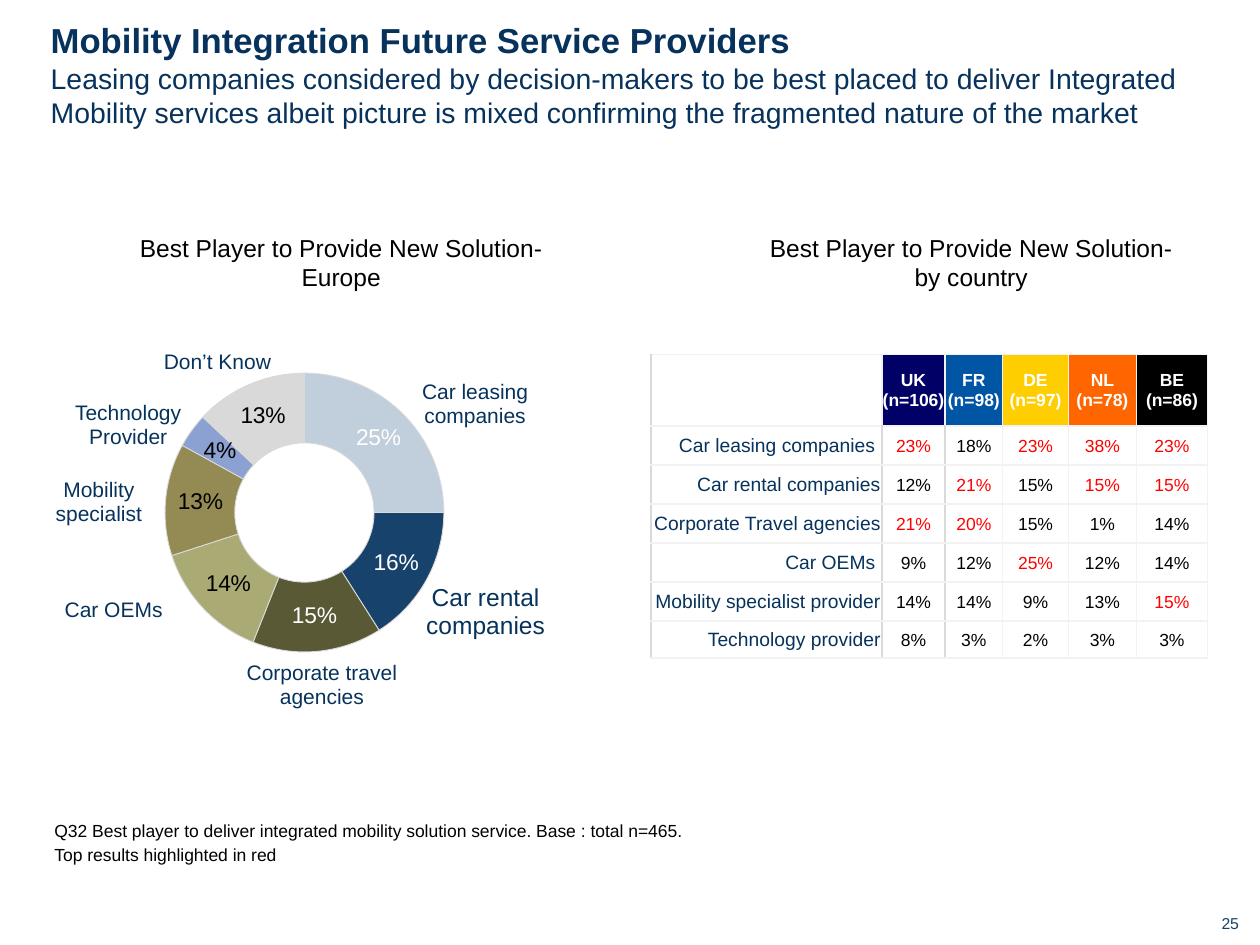
from lxml import etree
from pptx import Presentation
from pptx.chart.data import CategoryChartData
from pptx.dml.color import RGBColor
from pptx.enum.chart import XL_CHART_TYPE
from pptx.enum.text import MSO_ANCHOR, MSO_AUTO_SIZE, PP_ALIGN
from pptx.oxml.ns import qn
from pptx.util import Pt

DOUGHNUT = XL_CHART_TYPE.DOUGHNUT
MIDDLE = MSO_ANCHOR.MIDDLE
NO_FIT = MSO_AUTO_SIZE.NONE
GROW = MSO_AUTO_SIZE.SHAPE_TO_FIT_TEXT
LEFT, CENTER, RIGHT = PP_ALIGN.LEFT, PP_ALIGN.CENTER, PP_ALIGN.RIGHT

NAVY, BLACK, WHITE, RED = "06325C", "000000", "FFFFFF", "FF0000"
PALE, GRAY = "F2F2F2", "D9D9D9"

SHARES = [
    (0.25, "C1CEDC", WHITE),
    (0.16, "17426B", WHITE),
    (0.15, "595936", WHITE),
    (0.14, "AAAA74", BLACK),
    (0.13, "948A54", BLACK),
    (0.04, "8BA1D2", BLACK),
    (0.13, GRAY, BLACK),
]
SLICE_LABELS = [
    ("Car leasing companies", 219, 217.5, 105, 27.5, 12),
    ("Car rental companies", 219, 334, 117, 32, 14),
    ("Mobility specialist", 25, 273.5, 63, 27.5, 12),
    ("Car OEMs", 6.5, 342, 117, 13.5, 12),
    ("Corporate travel agencies", 130, 378, 108, 27.5, 12),
    ("Technology Provider", 24, 229.5, 98.5, 27.5, 12),
    ("Don’t Know", 75, 200, 98.5, 13.5, 12),
]
COUNTRIES = [
    ("UK (n=106)", "000066"),
    ("FR\n(n=98)", "0055A4"),
    ("DE (n=97)", "FFCE00"),
    ("NL\n(n=78)", "FF6600"),
    ("BE (n=86)", BLACK),
]
PLAYERS = [
    ("Car leasing companies ", [23, 18, 23, 38, 23]),
    ("Car rental companies", [12, 21, 15, 15, 15]),
    ("Corporate Travel agencies", [21, 20, 15, 1, 14]),
    ("Car OEMs ", [9, 12, 25, 12, 14]),
    ("Mobility specialist provider ", [14, 14, 9, 13, 15]),
    ("Technology provider", [8, 3, 2, 3, 3]),
]
COLUMN_WIDTHS = [132, 36, 33, 37.5, 39, 40.5]
ROW_HEIGHTS = [41] + [22.3] * 5 + [21]


def color(value):
    return RGBColor.from_string(value)


class SlideBuilder:
    font_name = "Arial"

    def __init__(self, slide):
        self.slide = slide

    def style_font(self, font, size, fill, bold=False):
        font.name = self.font_name
        font.size = Pt(size)
        font.bold = bold
        font.color.rgb = color(fill)

    def title(self, heading, message, left, top, width, height):
        shape = self.slide.shapes.title
        shape.left, shape.top = Pt(left), Pt(top)
        shape.width, shape.height = Pt(width), Pt(height)
        frame = shape.text_frame
        frame.auto_size = NO_FIT
        frame.word_wrap = True
        frame.vertical_anchor = MIDDLE
        frame.margin_left = frame.margin_right = frame.margin_top = frame.margin_bottom = 0
        paragraph = frame.paragraphs[0]
        paragraph.alignment = LEFT
        self.style_font(paragraph.font, 19.8, NAVY, True)
        heading_run = paragraph.add_run()
        heading_run.text = heading
        self.style_font(heading_run.font, 19.8, NAVY, True)
        paragraph.add_line_break()
        message_run = paragraph.add_run()
        message_run.text = message
        self.style_font(message_run.font, 16.2, NAVY)

    def text(self, text, left, top, width, height, size, fill=NAVY,
             align=CENTER, spacing=None, inset=True):
        shape = self.slide.shapes.add_textbox(Pt(left), Pt(top), Pt(width), Pt(height))
        frame = shape.text_frame
        frame.word_wrap = True
        frame.auto_size = GROW
        if not inset:
            frame.margin_left = frame.margin_right = frame.margin_top = frame.margin_bottom = 0
        frame.text = text
        for paragraph in frame.paragraphs:
            paragraph.alignment = align
            paragraph.line_spacing = spacing
            self.style_font(paragraph.font, size, fill)

    def doughnut(self, shares, left, top, width, height):
        data = CategoryChartData(number_format="0%")
        data.categories = [str(number) for number in range(1, len(shares) + 1)]
        data.add_series("Series 1", [share for share, _, _ in shares])
        chart = self.slide.shapes.add_chart(
            DOUGHNUT, Pt(left), Pt(top), Pt(width), Pt(height), data).chart
        chart.has_legend = False
        chart.has_title = False
        self.style_font(chart.font, 12, BLACK)
        plot = chart.plots[0]
        plot.vary_by_categories = True
        plot.has_data_labels = True
        labels = plot.data_labels
        labels.show_value = True
        labels.show_percentage = False
        labels.number_format = "0%"
        labels.number_format_is_linked = False
        self.style_font(labels.font, 13, BLACK)
        for index, (_, fill, label_fill) in enumerate(shares):
            point = plot.series[0].points[index]
            point.format.fill.solid()
            point.format.fill.fore_color.rgb = color(fill)
            point.format.line.color.rgb = color(GRAY)
            point.format.line.width = Pt(0.5)
            self.style_font(point.data_label.font, 13, label_fill)
        plot_area = chart.element.find(".//" + qn("c:plotArea"))
        plot_area.find(".//" + qn("c:holeSize")).set("val", "54")
        layout = plot_area.find(qn("c:layout"))
        if layout is None:
            layout = etree.Element(qn("c:layout"))
            plot_area.insert(0, layout)
        manual = etree.SubElement(layout, qn("c:manualLayout"))
        for tag, value in [("layoutTarget", "inner"), ("xMode", "edge"), ("yMode", "edge"),
                           ("x", "0"), ("y", "0.09"), ("w", "1"), ("h", "0.83")]:
            etree.SubElement(manual, qn("c:" + tag)).set("val", value)

    def cell(self, cell, text, size, fill, align, background=None, bold=False):
        cell.vertical_anchor = MIDDLE
        side = 0 if background else Pt(0.7)
        cell.margin_left = cell.margin_right = side
        cell.margin_top = Pt(0.7)
        cell.margin_bottom = Pt(0.7) if background else 0
        if background:
            cell.fill.solid()
            cell.fill.fore_color.rgb = color(background)
        else:
            cell.fill.background()
        cell.text = text
        for paragraph in cell.text_frame.paragraphs:
            paragraph.alignment = align
            self.style_font(paragraph.font, size, fill, bold)

    def borders(self, cell, left, right):
        properties = cell._tc.get_or_add_tcPr()
        edges = [("a:lnL", left), ("a:lnR", right), ("a:lnT", PALE), ("a:lnB", PALE)]
        for position, (tag, fill) in enumerate(edges):
            line = etree.Element(qn(tag), w=str(Pt(1)))
            solid = etree.SubElement(line, qn("a:solidFill"))
            etree.SubElement(solid, qn("a:srgbClr"), val=fill)
            properties.insert(position, line)

    def country_table(self, countries, players, left, top):
        table = self.slide.shapes.add_table(
            len(ROW_HEIGHTS), len(COLUMN_WIDTHS), Pt(left), Pt(top),
            Pt(sum(COLUMN_WIDTHS)), Pt(sum(ROW_HEIGHTS))).table
        table.first_row = table.horz_banding = False
        for column, width in zip(table.columns, COLUMN_WIDTHS):
            column.width = Pt(width)
        for row, height in zip(table.rows, ROW_HEIGHTS):
            row.height = Pt(height)
        self.cell(table.cell(0, 0), "", 10, NAVY, CENTER)
        for column, (country, fill) in enumerate(countries, 1):
            self.cell(table.cell(0, column), country, 10, WHITE, CENTER, fill, True)
        second_best = [sorted(scores)[-2] for scores in zip(*(row for _, row in players))]
        for row, (player, scores) in enumerate(players, 1):
            self.cell(table.cell(row, 0), player, 11, NAVY, RIGHT)
            for column, (score, limit) in enumerate(zip(scores, second_best), 1):
                fill = RED if score >= limit else BLACK
                self.cell(table.cell(row, column), f"{score}%", 10, fill, CENTER)
        for row in range(len(ROW_HEIGHTS)):
            for column in range(len(COLUMN_WIDTHS)):
                left_fill = GRAY if column == 0 or (row and column < 3) else PALE
                right_fill = GRAY if row and column < 2 else PALE
                self.borders(table.cell(row, column), left_fill, right_fill)


def main():
    presentation = Presentation()
    presentation.slide_width, presentation.slide_height = Pt(720), Pt(540)
    builder = SlideBuilder(presentation.slides.add_slide(presentation.slide_layouts[5]))
    builder.title(
        "Mobility Integration Future Service Providers",
        "Leasing companies considered by decision-makers to be best placed to deliver "
        "Integrated Mobility services albeit picture is mixed confirming the fragmented "
        "nature of the market", 29, 11, 660, 62.5)
    builder.doughnut(SHARES, 43, 196, 262, 192)
    for text, left, top, width, height, size in SLICE_LABELS:
        builder.text(text, left, top, width, height, size, spacing=0.95, inset=False)
    for scope, left in [("Europe", 66), ("by country", 426)]:
        builder.text(f"Best Player to Provide New Solution-{scope}",
                     left, 129.5, 258, 41, 14, BLACK)
    builder.country_table(COUNTRIES, PLAYERS, 372, 202.5)
    builder.text("Q32 Best player to deliver integrated mobility solution service. "
                 "Base : total n=465.\nTop results highlighted in red",
                 24, 463, 636, 35, 10, BLACK, LEFT, 1.15)
    builder.text("25", 558, 522, 150, 12, 9, "17426B", RIGHT, inset=False)
    presentation.save("out.pptx")


if __name__ == "__main__":
    main()
